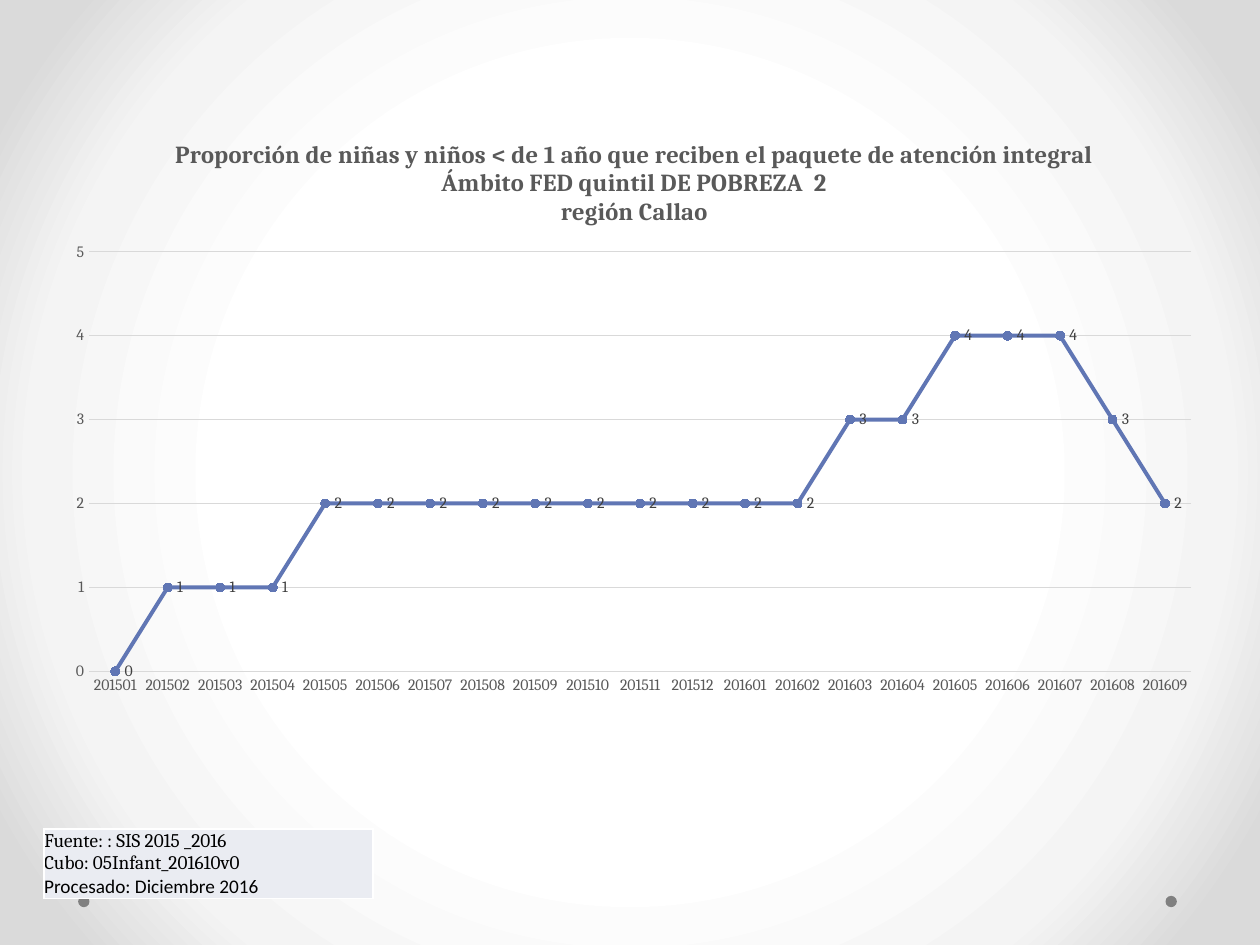
from lxml.etree import SubElement
from pptx import Presentation
from pptx.chart.data import CategoryChartData as ChartData
from pptx.dml.color import RGBColor
from pptx.enum.chart import XL_CHART_TYPE as Kind
from pptx.enum.chart import XL_LABEL_POSITION as Place
from pptx.enum.chart import XL_MARKER_STYLE as Mark
from pptx.enum.chart import XL_TICK_MARK as Tick
from pptx.enum.shapes import MSO_SHAPE as Shape
from pptx.enum.text import MSO_ANCHOR as Anchor
from pptx.oxml import parse_xml
from pptx.oxml.ns import nsdecls, qn
from pptx.util import Inches, Pt

BLACK = RGBColor(0, 0, 0)
BLUE = RGBColor(0x60, 0x76, 0xB4)
PALE = RGBColor(0xEA, 0xEC, 0xF2)
DOT = RGBColor(0x80, 0x80, 0x80)
GRID = RGBColor(0xD9, 0xD9, 0xD9)
TEXT = RGBColor(0x59, 0x59, 0x59)
LABEL = RGBColor(0x40, 0x40, 0x40)
WHITE = RGBColor(0xFF, 0xFF, 0xFF)
STOPS = [(50, WHITE), (76, RGBColor(0xF4, 0xF4, 0xF4)), (92, RGBColor(0xDA, 0xDA, 0xDA))]

TITLE = [
    "Proporción de niñas y niños < de 1 año que reciben el paquete de atención integral",
    "Ámbito FED quintil DE POBREZA  2",
    "región Callao",
]
MONTHS = [f"2015{m:02}" for m in range(1, 13)] + [f"2016{m:02}" for m in range(1, 10)]
VALUES = [0] + [1] * 3 + [2] * 10 + [3] * 2 + [4] * 3 + [3, 2]
NOTES = [
    ("Fuente: : SIS 2015 _2016", "Cambria"),
    ("Cubo: 05Infant_201610v0", "Cambria"),
    ("Procesado: Diciembre 2016", "Calibri"),
]


def style(font, size, color, name="Cambria", bold=False):
    font.size, font.name, font.bold = Pt(size), name, bold
    font.color.rgb = color


def set_back(slide):
    """Fill the background with a gradient that spreads from the centre."""
    slide.background.fill.gradient()
    grad = next(slide.element.iter(qn("a:gradFill")))
    for child in list(grad):
        grad.remove(child)
    stops = SubElement(grad, qn("a:gsLst"))
    for pos, color in STOPS:
        stop = SubElement(stops, qn("a:gs"), pos=str(pos * 1000))
        SubElement(stop, qn("a:srgbClr"), val=str(color))
    way = SubElement(grad, qn("a:path"), path="circle")
    SubElement(way, qn("a:fillToRect"), {side: "50000" for side in "ltrb"})


def add_dot(slide, left):
    size = Inches(0.09)
    dot = slide.shapes.add_shape(Shape.OVAL, Inches(left), Inches(7.11), size, size)
    dot.shadow.inherit = False
    dot.fill.solid()
    dot.fill.fore_color.rgb = DOT
    dot.line.fill.background()


def set_line(line, color, width):
    line.color.rgb = color
    line.width = Pt(width)


def set_title(chart):
    frame = chart.chart_title.text_frame
    frame.text = "\n".join(TITLE)
    for para in frame.paragraphs:
        for run in para.runs:
            style(run.font, 14, TEXT, bold=True)


def set_axes(chart):
    cat, val = chart.category_axis, chart.value_axis
    for axis in (cat, val):
        axis.major_tick_mark = axis.minor_tick_mark = Tick.NONE
        style(axis.tick_labels.font, 9, TEXT)
    set_line(cat.format.line, GRID, 0.75)
    val.format.line.fill.background()
    set_line(val.major_gridlines.format.line, GRID, 0.75)
    val.minimum_scale, val.maximum_scale, val.major_unit = 0, 5, 1
    val.tick_labels.number_format = "0"
    val.tick_labels.number_format_is_linked = False


def set_series(chart):
    plot = chart.plots[0]
    plot.vary_by_categories = False
    series = plot.series[0]
    series.smooth = False
    set_line(series.format.line, BLUE, 2.25)
    mark = series.marker
    mark.style, mark.size = Mark.CIRCLE, 5
    mark.format.fill.solid()
    mark.format.fill.fore_color.rgb = BLUE
    set_line(mark.format.line, BLUE, 0.75)
    labels = series.data_labels
    labels.show_value = True
    labels.position = Place.RIGHT
    labels.number_format, labels.number_format_is_linked = "0", False
    style(labels.font, 9, LABEL)


def set_plot(chart, **box):
    """Place the inner plot area by shares of the chart's size."""
    area = next(chart.element.iter(qn("c:plotArea")))
    for old in area.findall(qn("c:layout")):
        area.remove(old)
    sizes = "".join(f'<c:{key} val="{share}"/>' for key, share in box.items())
    area.insert(0, parse_xml(
        f'<c:layout {nsdecls("c")}><c:manualLayout><c:layoutTarget val="inner"/>'
        f'<c:xMode val="edge"/><c:yMode val="edge"/>{sizes}</c:manualLayout></c:layout>'))


def add_graph(slide):
    data = ChartData(number_format="0")
    data.categories = MONTHS
    data.add_series("Series 1", VALUES)
    chart = slide.shapes.add_chart(
        Kind.LINE_MARKERS, Inches(0.43), Inches(0.92), Inches(9.21), Inches(4.69), data).chart
    chart.has_legend = False
    style(chart.font, 10, BLACK)
    set_title(chart)
    set_axes(chart)
    set_series(chart)
    set_plot(chart, x=0.03, y=0.23, w=0.95, h=0.71)


def add_border(cell):
    props = cell._tc.get_or_add_tcPr()
    for i, side in enumerate("LRTB"):
        props.insert(i, parse_xml(
            f'<a:ln{side} {nsdecls("a")} w="{Pt(1)}"><a:solidFill>'
            f'<a:srgbClr val="{WHITE}"/></a:solidFill></a:ln{side}>'))


def add_notes(slide):
    table = slide.shapes.add_table(
        1, 1, Inches(0.35), Inches(6.58), Inches(2.61), Inches(0.55)).table
    cell = table.cell(0, 0)
    cell.margin_left = cell.margin_right = cell.margin_top = cell.margin_bottom = 0
    cell.vertical_anchor = Anchor.BOTTOM
    cell.fill.solid()
    cell.fill.fore_color.rgb = PALE
    cell.text_frame.text = "\n".join(text for text, name in NOTES)
    for para, (text, name) in zip(cell.text_frame.paragraphs, NOTES):
        style(para.runs[0].font, 11, BLACK, name)
    add_border(cell)


def main():
    deck = Presentation()
    deck.slide_width, deck.slide_height = Inches(10), Inches(7.5)
    slide = deck.slides.add_slide(deck.slide_layouts[6])
    set_back(slide)
    for left in (9.25, 0.62):
        add_dot(slide, left)
    add_graph(slide)
    add_notes(slide)
    deck.save("out.pptx")


if __name__ == "__main__":
    main()
